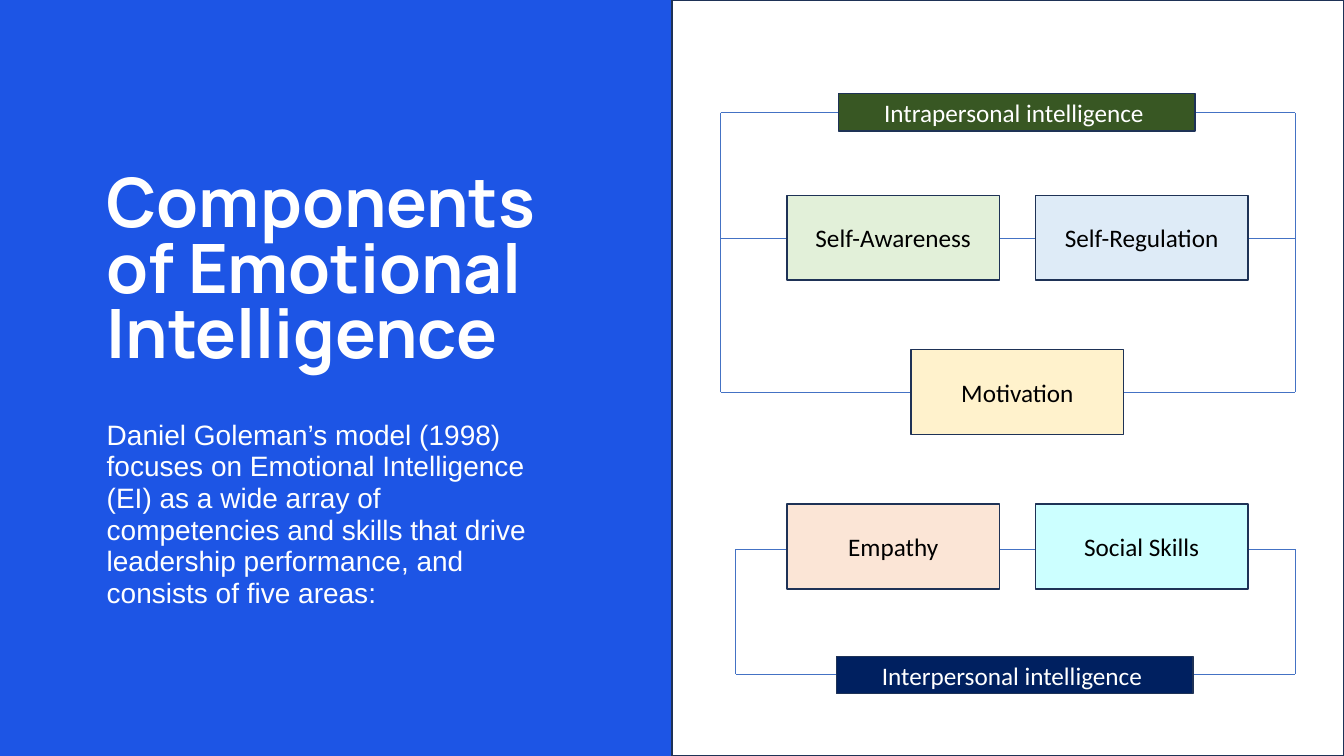
"""Build the slide on the components of emotional intelligence."""
from dataclasses import dataclass

from lxml import etree
from pptx import Presentation
from pptx.dml.color import RGBColor
from pptx.enum.shapes import MSO_CONNECTOR, MSO_SHAPE
from pptx.enum.text import MSO_ANCHOR, PP_ALIGN
from pptx.oxml.ns import qn
from pptx.util import Cm, Pt

RECTANGLE = MSO_SHAPE.RECTANGLE
STRAIGHT = MSO_CONNECTOR.STRAIGHT
CENTER, LEFT = PP_ALIGN.CENTER, PP_ALIGN.LEFT
MIDDLE, TOP = MSO_ANCHOR.MIDDLE, MSO_ANCHOR.TOP

SLIDE_WIDTH, SLIDE_HEIGHT = 33.87, 19.05
PANEL_LEFT = SLIDE_WIDTH / 2
BOX_WIDTH, BOX_HEIGHT = 5.36, 2.14
LABEL_WIDTH, LABEL_HEIGHT = 8.99, 0.94
COLUMN_LEFT, COLUMN_STEP = 19.83, 6.26
ROW_TOP, ROW_STEP = 4.92, 3.89


@dataclass(frozen=True)
class Theme:
    background: str = "1D55E5"
    white: str = "FFFFFF"
    black: str = "000000"
    outline: str = "1E3256"
    connector: str = "4472C4"
    intrapersonal: str = "385723"
    interpersonal: str = "002060"
    title_size: float = 48.6
    body_size: float = 20
    label_size: float = 18
    outline_width: float = 1
    connector_width: float = 0.5


THEME = Theme()
TITLE_FORMAT = {"name": "Manrope", "size": Pt(THEME.title_size), "bold": True}
BODY_FORMAT = {"name": "Arial", "size": Pt(THEME.body_size)}
LABEL_FORMAT = {"name": "Calibri", "size": Pt(THEME.label_size)}

COMPONENTS = (
    ("Self-Awareness", 0, 0, "E2F0D9"),
    ("Self-Regulation", 1, 0, "DEEBF7"),
    ("Motivation", 0.5, 1, "FFF2CC"),
    ("Empathy", 0, 2, "FBE5D6"),
    ("Social Skills", 1, 2, "CCFFFF"),
)
LABELS = (
    ("Intrapersonal intelligence ", 21.13, 2.36, THEME.intrapersonal),
    ("Interpersonal intelligence ", 21.08, 16.54, THEME.interpersonal),
)
BRACKETS = (
    (18.16, 32.64, (2.84, 6.0, 9.88)),
    (18.54, 32.64, (13.84, 16.99)),
)
TITLE = "Components of Emotional Intelligence"
BODY = (
    "Daniel Goleman’s model (1998) focuses on Emotional Intelligence (EI) "
    "as a wide array of competencies and skills that drive leadership "
    "performance, and consists of five areas:"
)


def write_text(shape, text, color, font_format, alignment, anchor, spacing=1.0):
    """Write one formatted paragraph into a shape."""
    frame = shape.text_frame
    frame.word_wrap = True
    frame.vertical_anchor = anchor
    paragraph = frame.paragraphs[0]
    paragraph.alignment = alignment
    paragraph.line_spacing = spacing
    run = paragraph.add_run()
    run.text = text
    run.font.color.rgb = RGBColor.from_string(color)
    for attribute, value in font_format.items():
        setattr(run.font, attribute, value)


def add_box(slide, left, top, width, height, fill):
    """Add an outlined rectangle and return it."""
    shape = slide.shapes.add_shape(RECTANGLE, Cm(left), Cm(top), Cm(width), Cm(height))
    shape.shadow.inherit = False
    shape.fill.solid()
    shape.fill.fore_color.rgb = RGBColor.from_string(fill)
    shape.line.color.rgb = RGBColor.from_string(THEME.outline)
    shape.line.width = Pt(THEME.outline_width)
    return shape


def add_label_box(slide, text, left, top, width, height, fill, color):
    """Add a rectangle with centred text."""
    shape = add_box(slide, left, top, width, height, fill)
    write_text(shape, text, color, LABEL_FORMAT, CENTER, MIDDLE)


def add_line(slide, start_x, start_y, end_x, end_y):
    """Add a thin straight connector."""
    ends = (Cm(length) for length in (start_x, start_y, end_x, end_y))
    connector = slide.shapes.add_connector(STRAIGHT, *ends)
    connector.line.color.rgb = RGBColor.from_string(THEME.connector)
    connector.line.width = Pt(THEME.connector_width)
    etree.SubElement(connector._element.spPr, qn("a:effectLst"))


def add_bracket(slide, left, right, levels):
    """Join two upright lines with a level line at each height."""
    for level in levels:
        add_line(slide, left, level, right, level)
    for side in (left, right):
        add_line(slide, side, levels[0], side, levels[-1])


def add_text(slide, text, left, top, width, height, font_format, spacing):
    """Add a white left-aligned text box."""
    box = slide.shapes.add_textbox(Cm(left), Cm(top), Cm(width), Cm(height))
    write_text(box, text, THEME.white, font_format, LEFT, TOP, spacing)


def main():
    """Build and save the presentation."""
    presentation = Presentation()
    presentation.slide_width = Cm(SLIDE_WIDTH)
    presentation.slide_height = Cm(SLIDE_HEIGHT)
    slide = presentation.slides.add_slide(presentation.slide_layouts[6])
    slide.background.fill.solid()
    slide.background.fill.fore_color.rgb = RGBColor.from_string(THEME.background)

    add_box(slide, PANEL_LEFT, 0, PANEL_LEFT, SLIDE_HEIGHT, THEME.white)
    for bracket in BRACKETS:
        add_bracket(slide, *bracket)
    for text, left, top, fill in LABELS:
        add_label_box(slide, text, left, top, LABEL_WIDTH, LABEL_HEIGHT, fill, THEME.white)
    add_text(slide, TITLE, 2.44, 4.3, 12.27, 4.37, TITLE_FORMAT, 0.8)
    add_text(slide, BODY, 2.44, 10.46, 11.61, 6.53, BODY_FORMAT, 0.94)
    for text, column, row, fill in COMPONENTS:
        left = COLUMN_LEFT + column * COLUMN_STEP
        top = ROW_TOP + row * ROW_STEP
        add_label_box(slide, text, left, top, BOX_WIDTH, BOX_HEIGHT, fill, THEME.black)

    presentation.save("out.pptx")


if __name__ == "__main__":
    main()
